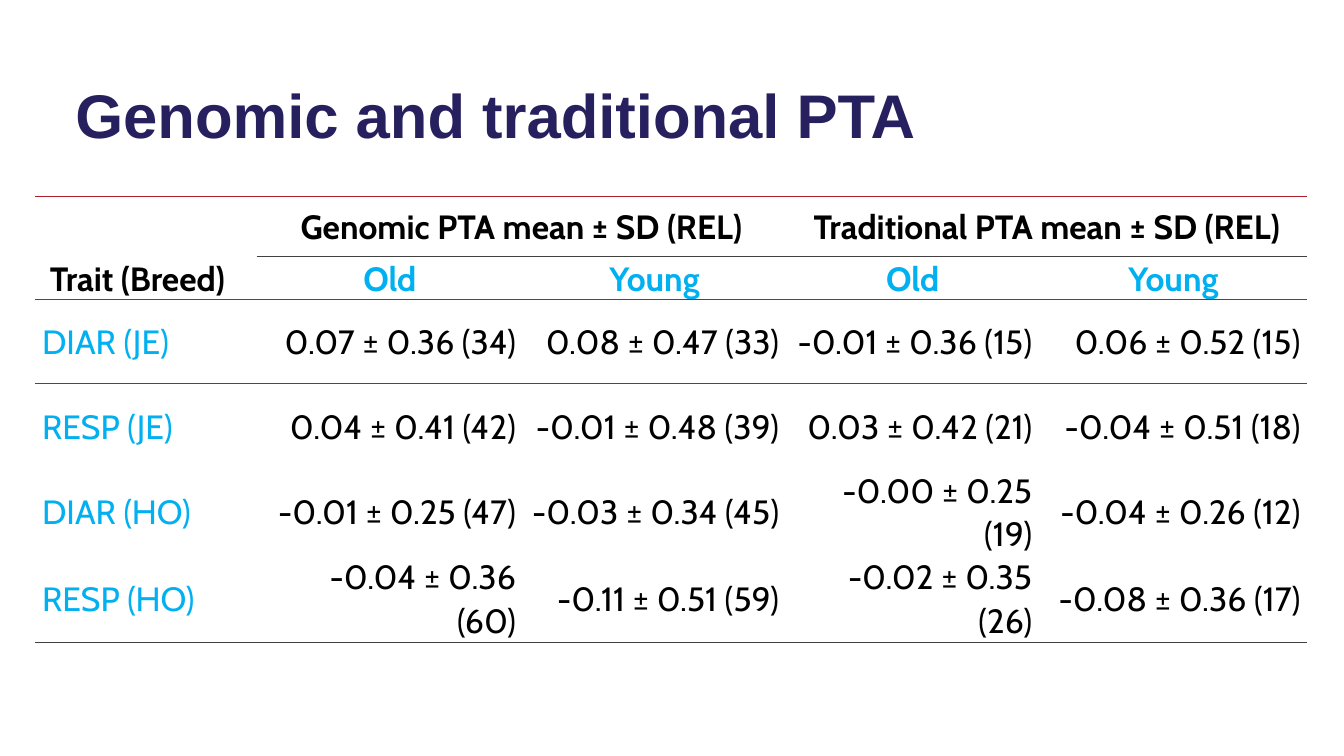
from dataclasses import dataclass
from typing import Optional

from lxml import etree
from pptx import Presentation, util as u
from pptx.dml.color import RGBColor
from pptx.enum import text
from pptx.oxml import ns

NAVY = RGBColor(0x26, 0x20, 0x5E)
CYAN = RGBColor(0x00, 0xB0, 0xF0)
BLACK = RGBColor(0, 0, 0)
RED = RGBColor(0xAB, 0x1E, 0x2C)
GRAY = RGBColor(0x40, 0x40, 0x40)
LEFT, CENTER, RIGHT = text.PP_ALIGN.LEFT, text.PP_ALIGN.CENTER, text.PP_ALIGN.RIGHT
COLUMN_WIDTHS = [5.59, 6.71, 6.63, 6.38, 6.76]
ROW_HEIGHTS = [1.5, 1.1, 2.11, 2.13, 2.13, 2.21]


@dataclass
class Rule:
    color: RGBColor
    points: float


@dataclass
class Entry:
    words: str
    color: RGBColor = BLACK
    bold: bool = False
    align: text.PP_ALIGN = RIGHT
    indent: float = 0.18


RULES = {0: Rule(RED, 1), 1: Rule(GRAY, 0.5), 2: Rule(RED, 1),
         3: Rule(RED, 1), 6: Rule(GRAY, 0.5)}
RESULTS = {
    "DIAR (JE)": ["0.07 ± 0.36 (34)", "0.08 ± 0.47 (33)", "-0.01 ± 0.36 (15)", "0.06 ± 0.52 (15)"],
    "RESP (JE)": ["0.04 ± 0.41 (42)", "-0.01 ± 0.48 (39)", "0.03 ± 0.42 (21)", "-0.04 ± 0.51 (18)"],
    "DIAR (HO)": ["-0.01 ± 0.25 (47)", "-0.03 ± 0.34 (45)", "-0.00 ± 0.25 (19)", "-0.04 ± 0.26 (12)"],
    "RESP (HO)": ["-0.04 ± 0.36 (60)", "-0.11 ± 0.51 (59)", "-0.02 ± 0.35 (26)", "-0.08 ± 0.36 (17)"],
}


def add_span(para, words: str, font: str, size: int, color: RGBColor, bold: bool) -> None:
    span = para.add_run()
    span.text = words
    span.font.name = font
    span.font.size = u.Pt(size)
    span.font.bold = bold
    span.font.color.rgb = color


def add_border(cell, side: str, rule: Optional[Rule]) -> None:
    line = etree.SubElement(cell._tc.get_or_add_tcPr(), ns.qn(f"a:ln{side}"))
    if rule is None:
        etree.SubElement(line, ns.qn("a:noFill"))
        return
    line.set("w", str(u.Pt(rule.points)))
    fill = etree.SubElement(line, ns.qn("a:solidFill"))
    etree.SubElement(fill, ns.qn("a:srgbClr")).set("val", str(rule.color))


def rule_at(edge: int, column: int) -> Optional[Rule]:
    return None if edge == 1 and column == 0 else RULES.get(edge)


def fill_cell(cell, entry: Entry) -> None:
    cell.margin_left, cell.margin_right = u.Cm(entry.indent), u.Cm(0.18)
    cell.margin_top = cell.margin_bottom = 0
    cell.vertical_anchor = text.MSO_ANCHOR.MIDDLE
    para = cell.text_frame.paragraphs[0]
    para.alignment = entry.align
    para.line_spacing = 1.07
    para.space_after = u.Pt(8)
    add_span(para, entry.words, "Cabin", 24, entry.color, entry.bold)


def add_title(page) -> None:
    box = page.shapes.add_textbox(u.Cm(1.65), u.Cm(0.81), u.Cm(30.48), u.Cm(4.34))
    box.text_frame.word_wrap = True
    box.text_frame.vertical_anchor = text.MSO_ANCHOR.MIDDLE
    para = box.text_frame.paragraphs[0]
    para.line_spacing = 0.9
    add_span(para, "Genomic and traditional PTA", "Arial", 44, NAVY, True)


def add_results(page) -> None:
    frame = page.shapes.add_table(
        len(ROW_HEIGHTS), len(COLUMN_WIDTHS), u.Cm(0.88), u.Cm(4.95),
        u.Cm(sum(COLUMN_WIDTHS)), u.Cm(sum(ROW_HEIGHTS)))
    table = frame.table
    table.first_row = table.horz_banding = False
    for column, width in zip(table.columns, COLUMN_WIDTHS):
        column.width = u.Cm(width)
    for row, height in zip(table.rows, ROW_HEIGHTS):
        row.height = u.Cm(height)
    for r in range(len(ROW_HEIGHTS)):
        for c in range(len(COLUMN_WIDTHS)):
            cell = table.cell(r, c)
            add_border(cell, "L", None)
            add_border(cell, "R", None)
            add_border(cell, "T", rule_at(r, c))
            add_border(cell, "B", rule_at(r + 1, c))
            cell.fill.background()

    for c, method in ((1, "Genomic"), (3, "Traditional")):
        table.cell(0, c).merge(table.cell(0, c + 1))
        fill_cell(table.cell(0, c), Entry(f"{method} PTA mean ± SD (REL)", bold=True, align=CENTER))
    fill_cell(table.cell(1, 0), Entry("Trait (Breed)", bold=True, align=LEFT, indent=0.38))
    for c, age in enumerate(["Old", "Young"] * 2, 1):
        fill_cell(table.cell(1, c), Entry(age, CYAN, True, CENTER))
    for r, (trait, values) in enumerate(RESULTS.items(), 2):
        fill_cell(table.cell(r, 0), Entry(trait, CYAN, align=LEFT))
        for c, value in enumerate(values, 1):
            fill_cell(table.cell(r, c), Entry(value))


def main() -> None:
    deck = Presentation()
    deck.slide_width, deck.slide_height = u.Cm(33.87), u.Cm(19.05)
    page = deck.slides.add_slide(deck.slide_layouts[6])
    add_title(page)
    add_results(page)
    deck.save("out.pptx")


if __name__ == "__main__":
    main()
